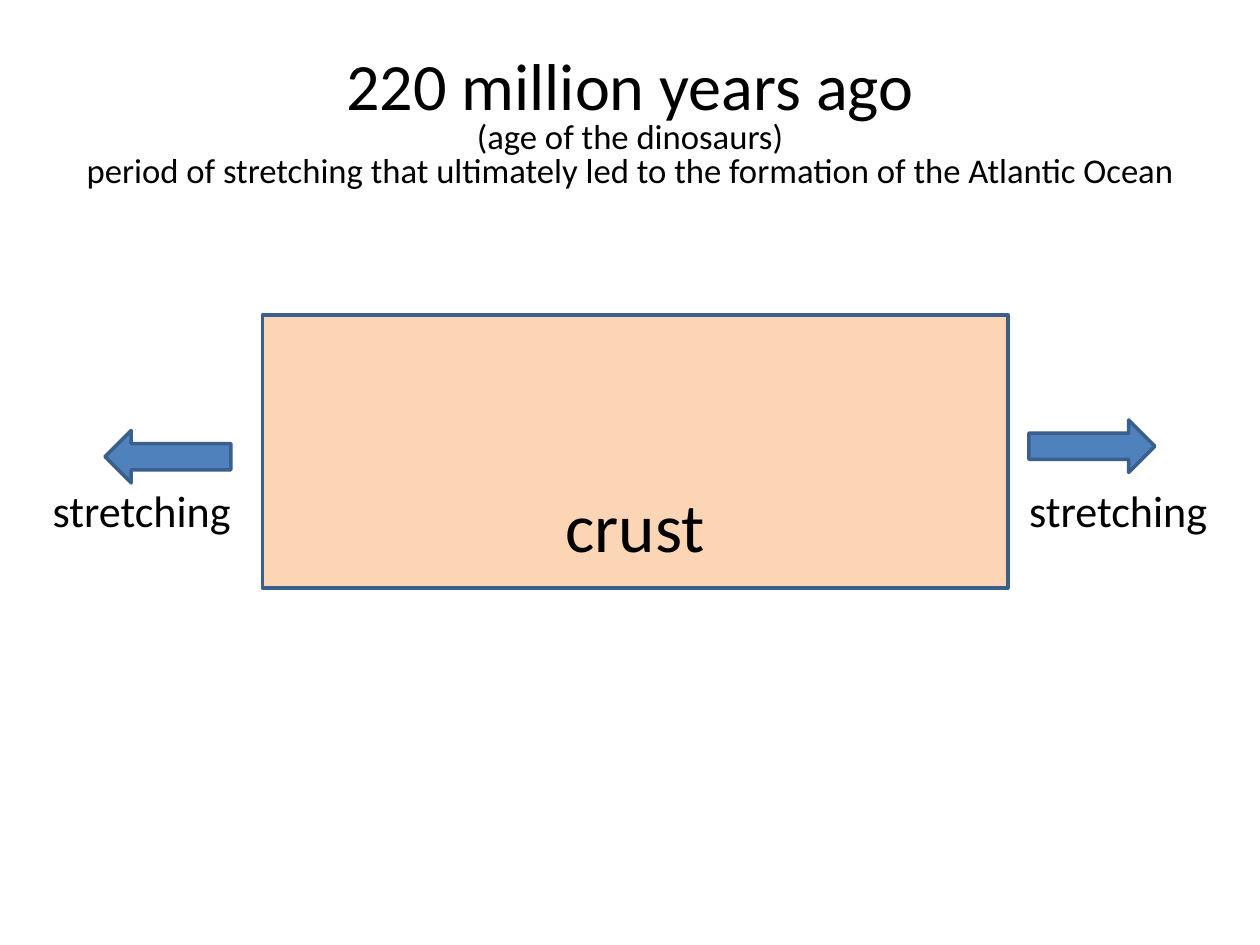
"""Build the slide on crust stretching 220 million years ago."""
from pptx import Presentation
from pptx.dml.color import RGBColor
from pptx.enum.shapes import MSO_SHAPE
from pptx.enum.text import MSO_ANCHOR, PP_ALIGN
from pptx.util import Inches, Pt

BLACK = RGBColor(0x00, 0x00, 0x00)
BLUE = RGBColor(0x4F, 0x81, 0xBD)
OUTLINE = RGBColor(0x3A, 0x5F, 0x8C)
PEACH = RGBColor(0xFC, 0xD5, 0xB5)

deck = Presentation()
deck.slide_width, deck.slide_height = Inches(10), Inches(7.5)
page = deck.slides.add_slide(deck.slide_layouts[6])
COLUMN = deck.slide_width / 120
ROW = deck.slide_height / 90


def place(column, row, columns, rows):
    return [round(n) for n in (column * COLUMN, row * ROW, columns * COLUMN, rows * ROW)]


def add_text(text, cell, sizes, spacing=0.8, bottom=0.05):
    box = page.shapes.add_textbox(*place(*cell))
    frame = box.text_frame
    frame.word_wrap = True
    frame.vertical_anchor = MSO_ANCHOR.MIDDLE
    frame.margin_bottom = Inches(bottom)
    frame.text = text
    for para, size in zip(frame.paragraphs, sizes):
        para.alignment = PP_ALIGN.CENTER
        para.line_spacing = spacing
        for span in para.runs:
            span.font.name = "Calibri"
            span.font.size = Pt(size)
            span.font.color.rgb = BLACK


for preset, cell, fill in (
    (MSO_SHAPE.RECTANGLE, (25, 30, 71, 26), PEACH),
    (MSO_SHAPE.RIGHT_ARROW, (98, 40, 12, 5), BLUE),
    (MSO_SHAPE.LEFT_ARROW, (10, 41, 12, 5), BLUE),
):
    shape = page.shapes.add_shape(preset, *place(*cell))
    shape.shadow.inherit = False
    shape.fill.solid()
    shape.fill.fore_color.rgb = fill
    shape.line.color.rgb = OUTLINE
    shape.line.width = Pt(2)

add_text("crust", (25, 46, 71, 8), [39.6], spacing=1.0)
add_text(
    "220 million years ago\n(age of the dinosaurs)\n"
    "period of stretching that ultimately led to the formation of the Atlantic Ocean",
    (0, 5, 120, 17),
    [37.8, 19.8, 19.8],
    bottom=0.32,
)
for column in (3, 96):
    add_text("stretching", (column, 46, 21, 6), [25.2])

deck.save("out.pptx")
